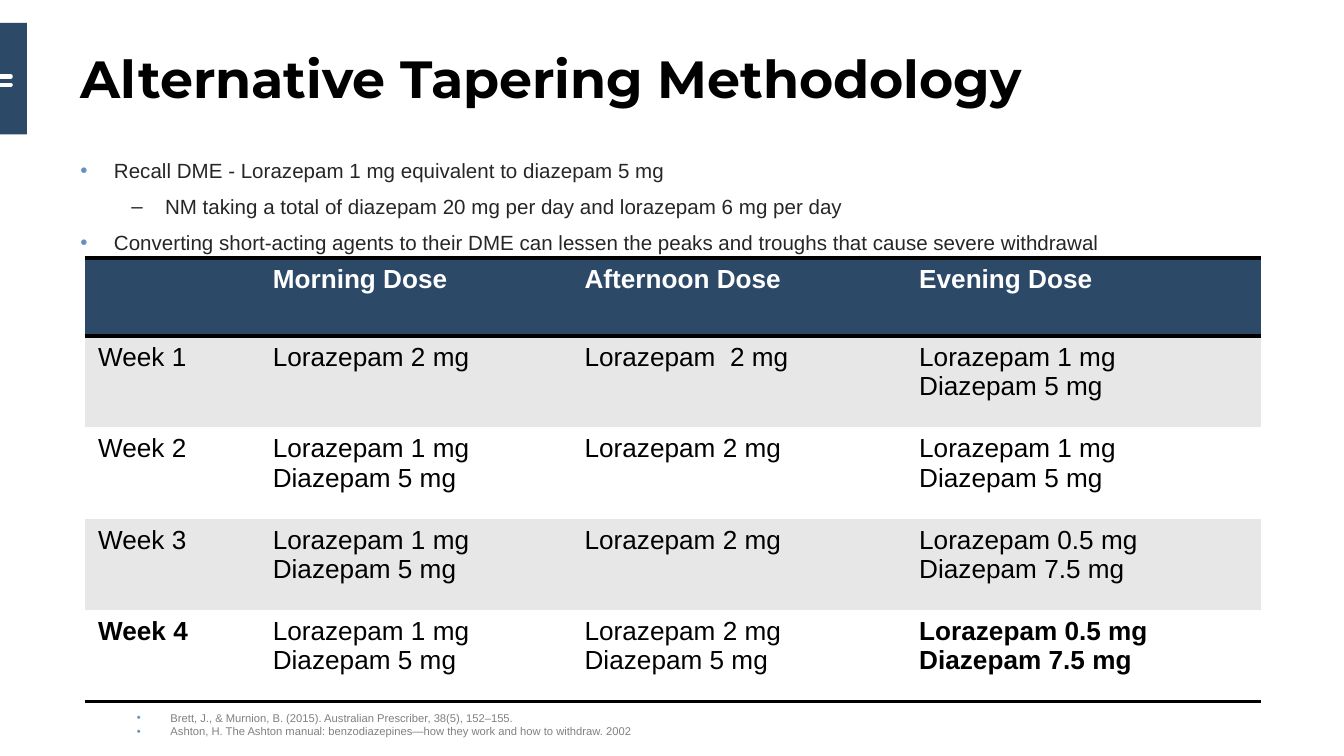
from pptx import Presentation
from pptx.dml.color import RGBColor
from pptx.enum.shapes import MSO_CONNECTOR, MSO_SHAPE
from pptx.enum.text import MSO_ANCHOR, PP_ALIGN
from pptx.oxml.ns import qn
from pptx.oxml.xmlchemy import OxmlElement
from pptx.util import Inches, Pt

RECTANGLE = MSO_SHAPE.RECTANGLE
STRAIGHT = MSO_CONNECTOR.STRAIGHT
TOP, MIDDLE, BOTTOM = MSO_ANCHOR.TOP, MSO_ANCHOR.MIDDLE, MSO_ANCHOR.BOTTOM
LEFT = PP_ALIGN.LEFT
NO_TABLE_STYLE = "{2D5ABB26-0587-4C30-8999-92F81FD0307C}"

COLORS = {"navy": "2D4968", "band": "E7E7E7", "white": "FFFFFF", "black": "000000",
          "body": "262626", "bullet": "6790BD", "source": "808080"}

# Content
TITLE = "Alternative Tapering Methodology"
# Each point: text, indent, bullet character, bullet color
POINTS = [
    ("Recall DME - Lorazepam 1 mg equivalent to diazepam 5 mg", 0.25, "•", "bullet"),
    ("NM taking a total of diazepam 20 mg per day and lorazepam 6 mg per day",
     0.63, "–", "body"),
    ("Converting short-acting agents to their DME can lessen the peaks and troughs "
     "that cause severe withdrawal", 0.25, "•", "bullet"),
]
SOURCES = [
    ("Brett, J., & Murnion, B. (2015). Australian Prescriber, 38(5), 152–155.",
     0.25, "•", "bullet"),
    ("Ashton, H. The Ashton manual: benzodiazepines—how they work and how to withdraw. 2002",
     0.25, "•", "bullet"),
]
L2, L1, L05 = "Lorazepam 2 mg", "Lorazepam 1 mg", "Lorazepam 0.5 mg"
D5, D75 = "Diazepam 5 mg", "Diazepam 7.5 mg"
SCHEDULE = [
    [[], ["Morning Dose"], ["Afternoon Dose"], ["Evening Dose"]],
    [["Week 1"], [L2], ["Lorazepam  2 mg"], [L1, D5]],
    [["Week 2"], [L1, D5], [L2], [L1, D5]],
    [["Week 3"], [L1, D5], [L2], [L05, D75]],
    [["Week 4"], [L1, D5], [L2, D5], [L05, D75]],
]
BOLD_CELLS = {(4, 0), (4, 3)}
COLUMN_WIDTHS = [1.3, 2.32, 2.49, 2.64]
ROW_HEIGHTS = [0.58] + [0.68] * 4


def rgb(name):
    return RGBColor.from_string(COLORS[name])


def add_bullet(paragraph, indent, char, color):
    properties = paragraph._p.get_or_add_pPr()
    properties.set("marL", str(Inches(indent)))
    properties.set("indent", str(Inches(-0.25)))
    bullet_color = OxmlElement("a:buClr")
    value = OxmlElement("a:srgbClr")
    value.set("val", COLORS[color])
    bullet_color.append(value)
    bullet_font = OxmlElement("a:buFont")
    bullet_font.set("typeface", "Arial")
    bullet = OxmlElement("a:buChar")
    bullet.set("char", char)
    properties.extend([bullet_color, bullet_font, bullet])


def write(frame, lines, size, color, font="Arial", bold=False, after=0):
    """Write lines, each a string or a (text, indent, bullet, color) tuple."""
    for i, line in enumerate(lines):
        paragraph = frame.paragraphs[0] if i == 0 else frame.add_paragraph()
        text, *bullet = (line,) if isinstance(line, str) else line
        paragraph.alignment = LEFT
        paragraph.line_spacing = 1.0
        paragraph.space_before = Pt(0)
        paragraph.space_after = Pt(after)
        if bullet:
            add_bullet(paragraph, *bullet)
        paragraph.font.size = Pt(size)
        run = paragraph.add_run()
        run.text = text
        run.font.name = font
        run.font.size = Pt(size)
        run.font.bold = bold
        run.font.color.rgb = rgb(color)


def add_list(slide, box, lines, anchor, **style):
    frame = slide.shapes.add_textbox(*map(Inches, box)).text_frame
    frame.word_wrap = True
    frame.vertical_anchor = anchor
    write(frame, lines, **style)


def set_rules(cell, sides):
    """Draw black rules on the named sides, given in schema order."""
    properties = cell._tc.get_or_add_tcPr()
    for position, side in enumerate(sides):
        rule = OxmlElement(f"a:ln{side}")
        rule.set("w", str(Pt(2)))
        fill = OxmlElement("a:solidFill")
        value = OxmlElement("a:srgbClr")
        value.set("val", COLORS["black"])
        fill.append(value)
        rule.append(fill)
        properties.insert(position, rule)


def add_edge_tab(slide):
    tab = slide.shapes.add_shape(RECTANGLE, *map(Inches, (0, 0.17, 0.2, 0.83)))
    tab.shadow.inherit = False
    tab.fill.solid()
    tab.fill.fore_color.rgb = rgb("navy")
    tab.line.fill.background()
    for y in (0.57, 0.63):
        dash = slide.shapes.add_connector(STRAIGHT, *map(Inches, (0, y, 0.08, y)))
        dash.line.color.rgb = rgb("white")
        dash.line.width = Pt(2.25)
        properties = dash._element.spPr
        properties.find(qn("a:ln")).set("cap", "rnd")
        properties.append(OxmlElement("a:effectLst"))


def add_schedule(slide):
    frame = slide.shapes.add_table(
        len(SCHEDULE), len(COLUMN_WIDTHS), Inches(0.63), Inches(1.92),
        Inches(sum(COLUMN_WIDTHS)), Inches(sum(ROW_HEIGHTS)))
    table = frame.table
    table._tbl.tblPr.find(qn("a:tableStyleId")).text = NO_TABLE_STYLE
    for column, width in zip(table.columns, COLUMN_WIDTHS):
        column.width = Inches(width)
    for r, (row, height) in enumerate(zip(SCHEDULE, ROW_HEIGHTS)):
        table.rows[r].height = Inches(height)
        header = r == 0
        fill = "navy" if header else "band" if r % 2 else "white"
        for c, doses in enumerate(row):
            cell = table.cell(r, c)
            cell.fill.solid()
            cell.fill.fore_color.rgb = rgb(fill)
            write(cell.text_frame, doses, size=14, color="white" if header else "black",
                  bold=header or (r, c) in BOLD_CELLS)
            if header:
                set_rules(cell, "TB")
            elif r == len(SCHEDULE) - 1:
                set_rules(cell, "B")


def main():
    # Widescreen slide, 16:9
    deck = Presentation()
    deck.slide_width = Inches(10)
    deck.slide_height = Inches(10 * 9 / 16)
    slide = deck.slides.add_slide(deck.slide_layouts[5])

    add_edge_tab(slide)

    # Title
    title = slide.shapes.title
    title.left, title.top, title.width, title.height = map(Inches, (0.5, 0.17, 9, 0.81))
    title.text_frame.vertical_anchor = MIDDLE
    write(title.text_frame, [TITLE], size=28, color="black", font="Montserrat", bold=True)

    # Points, sources and dose table
    add_list(slide, (0.5, 1.13, 9, 0.79), POINTS, TOP, size=11, color="body", after=6)
    add_list(slide, (0.92, 5.23, 8.45, 0.31), SOURCES, BOTTOM, size=6, color="source")
    add_schedule(slide)

    deck.save("out.pptx")


if __name__ == "__main__":
    main()
